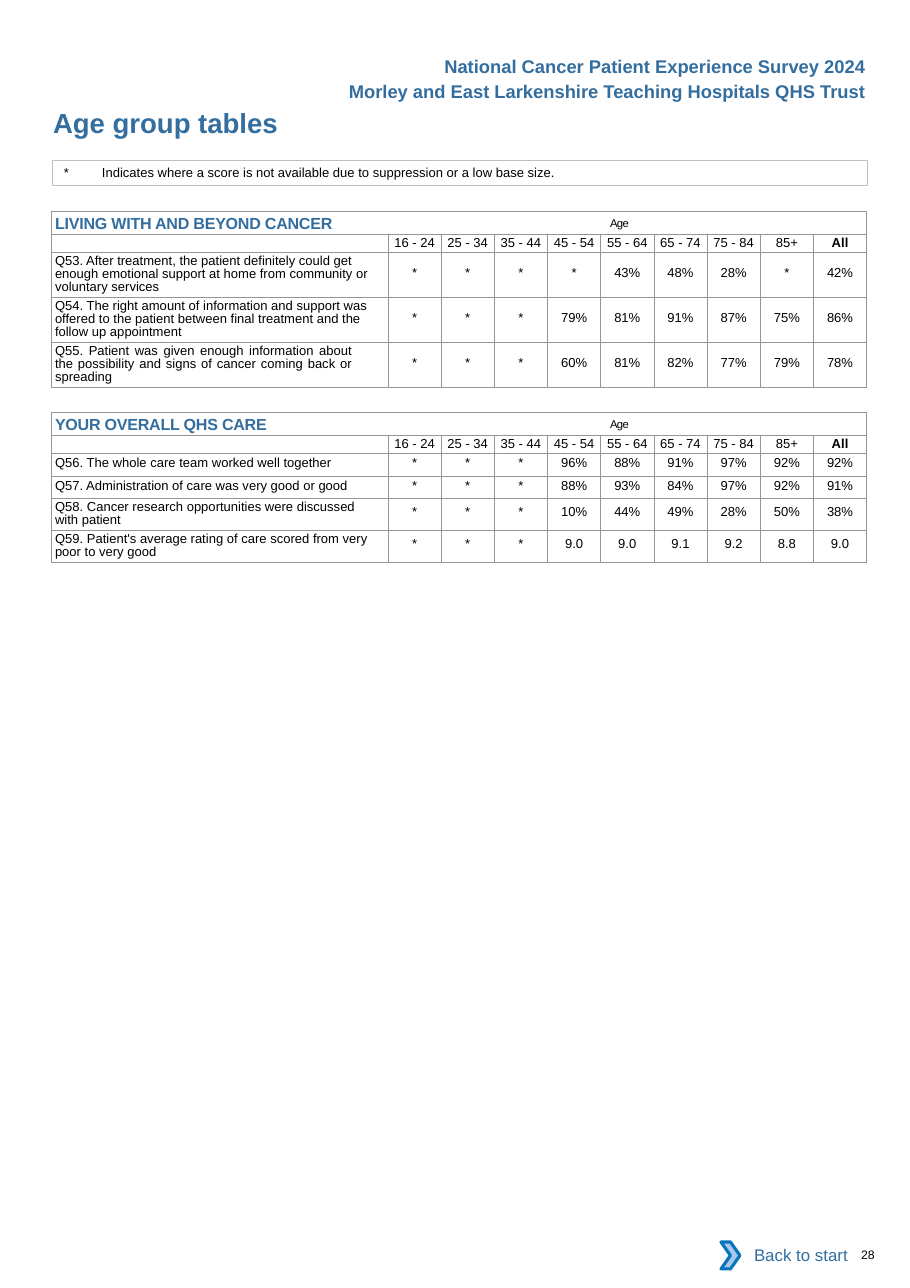
from lxml import etree
from pptx import Presentation
from pptx.dml.color import RGBColor
from pptx.enum.shapes import MSO_SHAPE
from pptx.enum.text import MSO_ANCHOR, MSO_AUTO_SIZE, PP_ALIGN
from pptx.oxml.ns import qn
from pptx.util import Emu, Pt

LEFT, CENTER, RIGHT, JUSTIFY = PP_ALIGN.LEFT, PP_ALIGN.CENTER, PP_ALIGN.RIGHT, PP_ALIGN.JUSTIFY
TOP, MIDDLE = MSO_ANCHOR.TOP, MSO_ANCHOR.MIDDLE
NO_AUTOSIZE = MSO_AUTO_SIZE.NONE
RECTANGLE, CHEVRON = MSO_SHAPE.RECTANGLE, MSO_SHAPE.CHEVRON

# Content
TITLE = "Age group tables"
HEADER_LINES = [
    "National Cancer Patient Experience Survey 2024",
    "Morley and East Larkenshire Teaching Hospitals QHS Trust",
]
NOTE = "*\tIndicates where a score is not available due to suppression or a low base size."
BACK_LABEL = "Back to start"
PAGE_NUMBER = "28"
AGE_GROUPS = ["16 - 24", "25 - 34", "35 - 44", "45 - 54", "55 - 64",
              "65 - 74", "75 - 84", "85+", "All"]

# Each section: heading, top, rows of (question, scores, height, alignment)
SECTIONS = [
    ("LIVING WITH AND BEYOND CANCER", 211, [
        ("Q53. After treatment, the patient definitely could get enough emotional "
         "support at home from community or voluntary services",
         ["*", "*", "*", "*", "43%", "48%", "28%", "*", "42%"], 45, LEFT),
        ("Q54. The right amount of information and support was offered to the "
         "patient between final treatment and the follow up appointment",
         ["*", "*", "*", "79%", "81%", "91%", "87%", "75%", "86%"], 45, LEFT),
        ("Q55. Patient was given enough information about the possibility and "
         "signs of cancer coming back or spreading",
         ["*", "*", "*", "60%", "81%", "82%", "77%", "79%", "78%"], 45, JUSTIFY),
    ]),
    ("YOUR OVERALL QHS CARE", 412, [
        ("Q56. The whole care team worked well together",
         ["*", "*", "*", "96%", "88%", "91%", "97%", "92%", "92%"], 23, LEFT),
        ("Q57. Administration of care was very good or good",
         ["*", "*", "*", "88%", "93%", "84%", "97%", "92%", "91%"], 22, LEFT),
        ("Q58. Cancer research opportunities were discussed with patient",
         ["*", "*", "*", "10%", "44%", "49%", "28%", "50%", "38%"], 32, LEFT),
        ("Q59. Patient's average rating of care scored from very poor to very good",
         ["*", "*", "*", "9.0", "9.0", "9.1", "9.2", "8.8", "9.0"], 32, LEFT),
    ]),
]

# Style and layout, lengths in px
FONT = "Arial"
COLORS = {"heading": "336E9F", "text": "000000", "grid": "939598", "box": "BFBFBF",
          "white": "FFFFFF", "chevron": "A8C7E9", "chevron line": "0A74BB"}
SCALE = 8298
PAGE_WIDTH, PAGE_HEIGHT = 910, 1288
MARGIN, TABLE_LEFT, TABLE_WIDTH, QUESTION_WIDTH = 52, 51, 816, 337
HEADING_HEIGHT, AGES_HEIGHT = 23, 18
QUESTION_INSET = 3
SCORE_INSETS = {45: 14, 32: 7, 23: 3, 22: 3}
QUESTION_GAPS = {LEFT: 16, JUSTIFY: 36}
HEADER_TOP, HEADER_STEP = 49, 25
AGE_TAB, NOTE_TAB = 555, 38


def px(length):
    return Emu(round(length * SCALE))


def color(name):
    return RGBColor.from_string(COLORS[name])


def style(paragraph, size, name="text", bold=False, align=LEFT):
    paragraph.alignment = align
    font = paragraph.font
    font.name, font.size, font.bold = FONT, Pt(size), bold
    font.color.rgb = color(name)


def add_run(paragraph, text, **attributes):
    run = paragraph.add_run()
    run.text = text
    for key, value in attributes.items():
        run.font._element.set(key, str(value))
    return run


def set_indent(paragraph, indent, tab=None):
    properties = paragraph._p.get_or_add_pPr()
    properties.set("marL", str(px(indent)))
    if tab:
        tabs = etree.Element(qn("a:tabLst"))
        etree.SubElement(tabs, qn("a:tab"), pos=str(px(tab)), algn="l")
        properties.insert_element_before(tabs, "a:defRPr", "a:extLst")


def set_insets(target, left=0, top=0, right=0, bottom=0):
    target.margin_left, target.margin_top = px(left), px(top)
    target.margin_right, target.margin_bottom = px(right), px(bottom)


def write(shape, text, size, name="text", bold=False, align=LEFT, anchor=TOP, insets=(0, 0, 0, 0)):
    frame = shape.text_frame
    frame.word_wrap, frame.auto_size = True, NO_AUTOSIZE
    frame.vertical_anchor = anchor
    set_insets(frame, *insets)
    paragraph = frame.paragraphs[0]
    paragraph.text = text
    style(paragraph, size, name, bold, align)
    return paragraph


def add_box(preset, bounds, fill=None, line=None, width=0.5):
    shape = slide.shapes.add_shape(preset, *map(px, bounds))
    shape.shadow.inherit = False
    if fill:
        shape.fill.solid()
        shape.fill.fore_color.rgb = color(fill)
    else:
        shape.fill.background()
    if line:
        shape.line.color.rgb = color(line)
        shape.line.width = Pt(width)
    else:
        shape.line.fill.background()
    return shape


def set_borders(cell):
    properties = cell._tc.get_or_add_tcPr()
    for index, side in enumerate(("a:lnL", "a:lnR", "a:lnT", "a:lnB")):
        border = etree.Element(qn(side), w=str(Pt(0.5)))
        fill = etree.SubElement(border, qn("a:solidFill"))
        etree.SubElement(fill, qn("a:srgbClr"), val=COLORS["grid"])
        properties.insert(index, border)


def fill_cell(cell, text, anchor=MIDDLE, bold=False, align=CENTER):
    cell.fill.background()
    set_borders(cell)
    set_insets(cell)
    cell.vertical_anchor = anchor
    paragraph = cell.text_frame.paragraphs[0]
    paragraph.text = text
    style(paragraph, 8.5, bold=bold, align=align)
    return paragraph


def add_section(heading, top, questions):
    heights = [HEADING_HEIGHT, AGES_HEIGHT] + [row[2] for row in questions]
    count = len(AGE_GROUPS)
    frame = slide.shapes.add_table(len(heights), count + 1, px(TABLE_LEFT), px(top),
                                   px(TABLE_WIDTH), px(sum(heights)))
    table = frame.table
    table.first_row = table.horz_banding = False
    score_width = (TABLE_WIDTH - QUESTION_WIDTH) / count
    for index, column in enumerate(table.columns):
        column.width = px(score_width if index else QUESTION_WIDTH)
    for row, height in zip(table.rows, heights):
        row.height = px(height)

    # Heading across all columns
    for index in range(count + 1):
        fill_cell(table.cell(0, index), "")
    table.cell(0, 0).merge(table.cell(0, count))
    paragraph = table.cell(0, 0).text_frame.paragraphs[0]
    style(paragraph, 10.5, "heading", True)
    set_indent(paragraph, 4, AGE_TAB)
    add_run(paragraph, heading + "\t", spc=-10)
    age = add_run(paragraph, "Age", spc=-40, baseline=10000)
    age.font.size, age.font.bold = Pt(12.8), False
    age.font.color.rgb = color("text")

    # Age groups
    for index, text in enumerate([""] + AGE_GROUPS):
        paragraph = fill_cell(table.cell(1, index), text, bold=text == "All")
        paragraph.line_spacing = Pt(9.9)

    # Questions and scores
    for row, (question, scores, height, align) in enumerate(questions, 2):
        cell = table.cell(row, 0)
        paragraph = fill_cell(cell, question, TOP, align=align)
        set_indent(paragraph, 4)
        set_insets(cell, top=QUESTION_INSET, right=QUESTION_GAPS[align])
        if height > 23:
            paragraph.line_spacing = Pt(8.6)
        for index, score in enumerate(scores, 1):
            cell = table.cell(row, index)
            fill_cell(cell, score, TOP)
            set_insets(cell, top=SCORE_INSETS[height])


presentation = Presentation()
presentation.slide_width, presentation.slide_height = px(PAGE_WIDTH), px(PAGE_HEIGHT)
slide = presentation.slides.add_slide(presentation.slide_layouts[5])

# Title and header lines
title = slide.shapes.title
title.left, title.top, title.width, title.height = map(px, (MARGIN, 106, 455, 33))
set_indent(write(title, TITLE, 18, "heading", True), 1)
for index, text in enumerate(HEADER_LINES):
    box = slide.shapes.add_textbox(*map(px, (317, HEADER_TOP + index * HEADER_STEP, 560, 33)))
    write(box, text, 12, "heading", True, RIGHT, insets=(11, 6, 11, 6))

# Note and tables
note = add_box(RECTANGLE, (MARGIN, 160, 815, 25), line="box")
set_indent(write(note, NOTE, 8.5, anchor=MIDDLE), 12, NOTE_TAB)
for section in SECTIONS:
    add_section(*section)

# Footer
back = add_box(RECTANGLE, (729, 1232, 130, 46), "white")
write(back, BACK_LABEL, 11, "heading", align=RIGHT, anchor=MIDDLE, insets=(11, 6, 11, 6))
add_box(CHEVRON, (721, 1242, 19, 27), "chevron", "chevron line", 2)
page = slide.shapes.add_textbox(*map(px, (850, 1247, 56, 14)))
set_indent(write(page, PAGE_NUMBER, 8), 11)

presentation.save("out.pptx")
